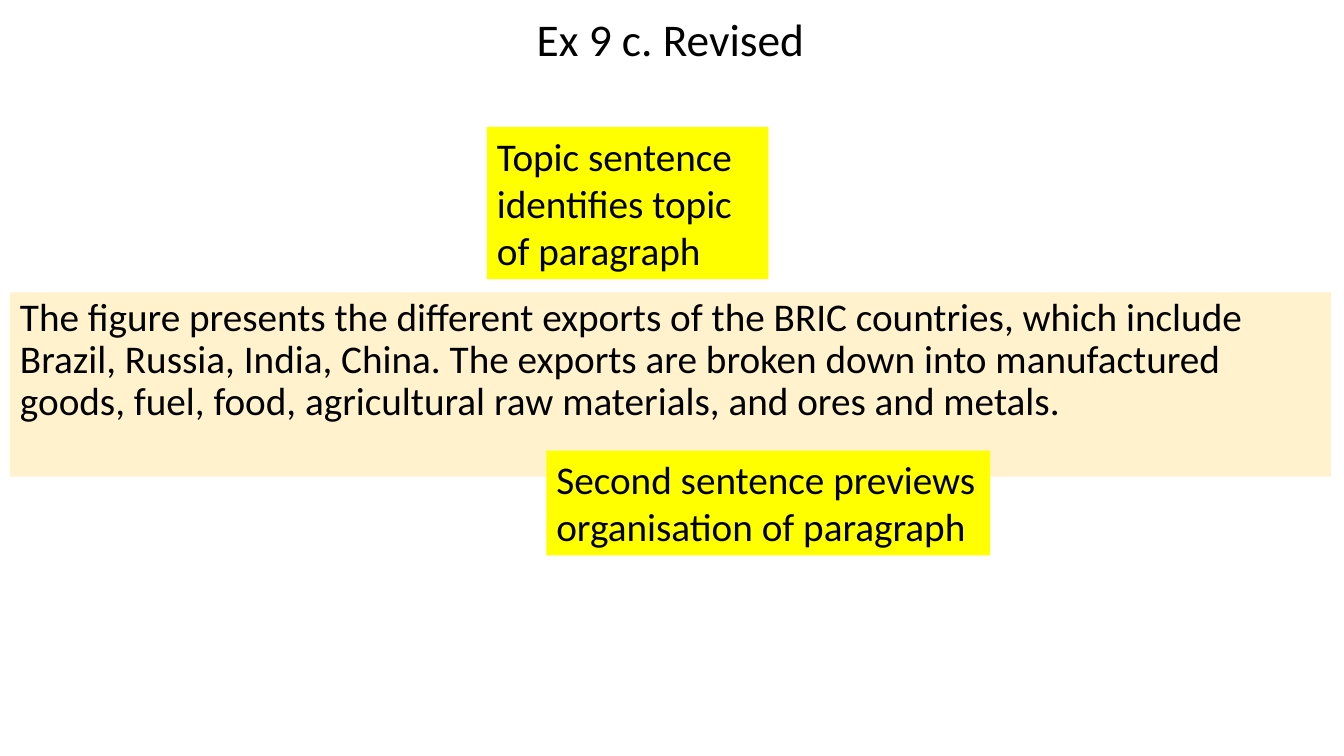
from dataclasses import dataclass

from pptx import Presentation, util as u
from pptx.dml.color import RGBColor
from pptx.enum import text as t


@dataclass(frozen=True)
class Theme:
    font: str = "Calibri"
    ink: str = "000000"
    passage: str = "FFF2CC"
    note: str = "FFFF00"
    title_size: float = 32.4
    body_size: float = 28


THEME = Theme()


def add_text(slide, content, box, *, size=THEME.body_size, fill=None,
             align=t.PP_ALIGN.LEFT, anchor=t.MSO_ANCHOR.TOP, spacing=1.0,
             before=0, wrap=True, auto_size=t.MSO_AUTO_SIZE.NONE):
    """Add a text box; each line of content becomes a paragraph."""
    panel = slide.shapes.add_textbox(*(u.Inches(length) for length in box))
    if fill:
        panel.fill.solid()
        panel.fill.fore_color.rgb = RGBColor.from_string(fill)
    frame = panel.text_frame
    frame.text = content
    frame.word_wrap = wrap
    frame.auto_size = auto_size
    frame.vertical_anchor = anchor
    for paragraph in frame.paragraphs:
        paragraph.alignment = align
        paragraph.line_spacing = spacing
        paragraph.space_before = u.Pt(before)
        for run in paragraph.runs:
            run.font.name = THEME.font
            run.font.size = u.Pt(size)
            run.font.color.rgb = RGBColor.from_string(THEME.ink)


def add_note(slide, content, box, wrap=True):
    """Add a highlighted comment on the passage."""
    add_text(slide, content, box, fill=THEME.note, wrap=wrap,
             auto_size=t.MSO_AUTO_SIZE.SHAPE_TO_FIT_TEXT)


def main():
    deck = Presentation()
    deck.slide_width, deck.slide_height = u.Inches(13.33), u.Inches(7.5)
    slide = deck.slides.add_slide(deck.slide_layouts[6])

    # Heading
    add_text(slide, "Ex 9 c. Revised", (0.9, 0.14, 11.5, 0.55),
             size=THEME.title_size, align=t.PP_ALIGN.CENTER,
             anchor=t.MSO_ANCHOR.MIDDLE, spacing=0.9)

    # Revised passage
    add_text(slide,
             "The figure presents the different exports of the BRIC countries, "
             "which include Brazil, Russia, India, China. The exports are "
             "broken down into manufactured goods, fuel, food, agricultural "
             "raw materials, and ores and metals.",
             (0.1, 2.9, 13.1, 1.83), fill=THEME.passage, spacing=0.9, before=10)

    # Notes on the two sentences
    add_note(slide, "Topic sentence identifies topic of paragraph",
             (4.83, 1.26, 2.79, 1.51))
    add_note(slide, "Second sentence previews\norganisation of paragraph",
             (5.42, 4.47, 4.4, 1.04), wrap=False)

    deck.save("out.pptx")


if __name__ == "__main__":
    main()
